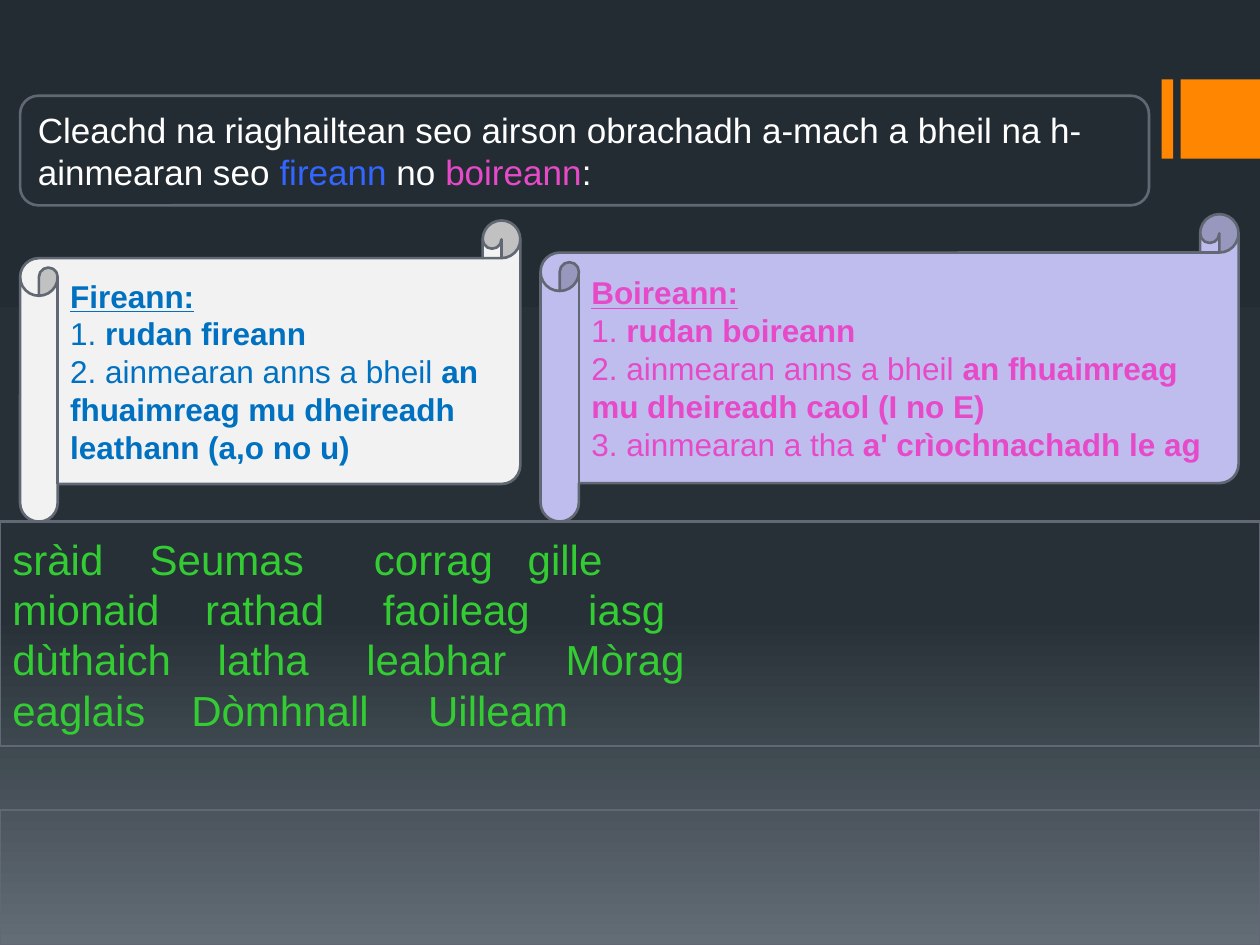
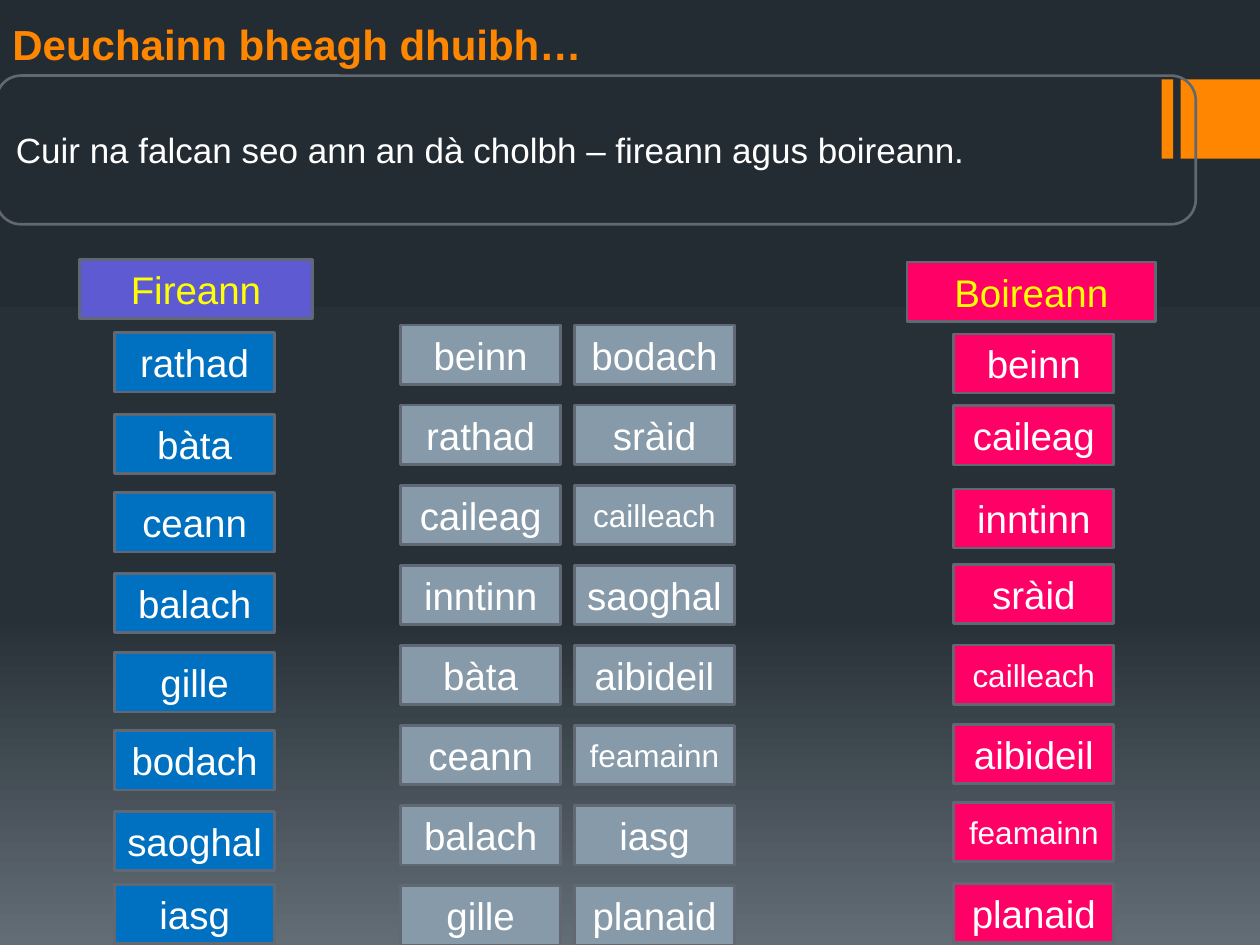
from copy import deepcopy
from dataclasses import dataclass
from typing import Optional

from lxml import etree
from pptx import Presentation
from pptx.dml.color import RGBColor
from pptx.enum import shapes, text
from pptx.oxml import ns
from pptx.util import Inches, Pt

ORANGE = RGBColor(0xFF, 0x86, 0x00)
OUTLINE = RGBColor(0x61, 0x68, 0x73)
WHITE = RGBColor(0xFF, 0xFF, 0xFF)
PAPER = RGBColor(0xF2, 0xF2, 0xF2)
LILAC = RGBColor(0xBE, 0xBD, 0xED)
BLUE = RGBColor(0x00, 0x70, 0xC0)
BRIGHT_BLUE = RGBColor(0x33, 0x66, 0xFF)
PINK = RGBColor(0xE7, 0x4A, 0xC9)
GREEN = RGBColor(0x33, 0xCC, 0x33)
GREY = RGBColor(0x86, 0x9A, 0xA9)
VIOLET = RGBColor(0x5D, 0x5A, 0xD2)
RASPBERRY = RGBColor(0xFF, 0x00, 0x66)
YELLOW = RGBColor(0xFF, 0xFF, 0x00)
BACKDROP = (
    (0, RGBColor(0x24, 0x2C, 0x33)),
    (0.65, RGBColor(0x27, 0x30, 0x37)),
    (1, RGBColor(0x63, 0x6D, 0x76)),
)
FONT = "Arial"
CARD_WIDTH, CARD_HEIGHT = 1.27, 0.47
LONG_WORDS = {"cailleach", "feamainn"}


@dataclass(frozen=True)
class Span:
    words: str
    color: Optional[RGBColor] = None
    bold: Optional[bool] = None
    underline: Optional[bool] = None


@dataclass(frozen=True)
class Line:
    spans: tuple[Span, ...]
    tabs: tuple[float, ...] = ()


@dataclass(frozen=True)
class Panel:
    kind: shapes.MSO_SHAPE
    box: tuple[float, float, float, float]
    fill: Optional[RGBColor] = None
    lines: tuple[Line, ...] = ()
    size: int = 20
    color: RGBColor = WHITE
    align: text.PP_ALIGN = text.PP_ALIGN.LEFT
    outlined: bool = True


@dataclass(frozen=True)
class WordColumn:
    left: float
    tops: tuple[float, ...]
    fill: RGBColor
    words: tuple[str, ...]


def plain(words: str) -> Line:
    return Line((Span(words),))


def rule(number: str, strong: str) -> Line:
    return Line((Span(number), Span(strong, bold=True)))


def heading(words: str) -> Line:
    return Line((Span(words, bold=True, underline=True),))


def word_row(words: str, *tabs: float) -> Line:
    return Line((Span("\t".join(words.split())),), tabs)


def write(frame, lines, size: int, color: RGBColor, align=text.PP_ALIGN.LEFT) -> None:
    frame.word_wrap = True
    for index, line in enumerate(lines):
        paragraph = frame.add_paragraph() if index else frame.paragraphs[0]
        paragraph.alignment = align
        if line.tabs:
            stops = etree.SubElement(paragraph._p.get_or_add_pPr(), ns.qn("a:tabLst"))
            for position in line.tabs:
                etree.SubElement(stops, ns.qn("a:tab"), pos=str(Inches(position)), algn="l")
        font = paragraph.font
        font.name, font.size = FONT, Pt(size)
        font.color.rgb = color
        for span in line.spans:
            run = paragraph.add_run()
            run.text = span.words
            run.font.bold, run.font.underline = span.bold, span.underline
            if span.color is not None:
                run.font.color.rgb = span.color


def draw_panel(slide, panel: Panel) -> None:
    shape = slide.shapes.add_shape(panel.kind, *map(Inches, panel.box))
    shape.shadow.inherit = False
    if panel.fill is None:
        shape.fill.background()
    else:
        shape.fill.solid()
        shape.fill.fore_color.rgb = panel.fill
    if panel.outlined:
        shape.line.color.rgb = OUTLINE
        shape.line.width = Pt(1.5)
    else:
        shape.line.fill.background()
    shape.text_frame.vertical_anchor = text.MSO_ANCHOR.MIDDLE
    write(shape.text_frame, panel.lines, panel.size, panel.color, panel.align)


def draw_card(slide, word: str, box, fill: RGBColor, color: RGBColor = WHITE) -> None:
    size = 18 if word in LONG_WORDS else 22
    draw_panel(slide, Panel(shapes.MSO_SHAPE.FLOWCHART_PROCESS, box, fill,
                            (plain(word),), size, color, text.PP_ALIGN.CENTER))


def draw_column(slide, column: WordColumn) -> None:
    for word, top in zip(column.words, column.tops):
        draw_card(slide, word, (column.left, top, CARD_WIDTH, CARD_HEIGHT), column.fill)


def set_backdrop(master) -> None:
    fill = master.background.fill
    fill.gradient()
    fill.gradient_angle = 270
    stops = master.element.find(".//" + ns.qn("a:gsLst"))
    stops.append(deepcopy(stops[-1]))
    for stop, (position, color) in zip(fill.gradient_stops, BACKDROP):
        stop.position = position
        stop.color.rgb = color


def add_slide(deck):
    slide = deck.slides.add_slide(deck.slide_layouts[6])
    for left, width in ((9.22, 0.09), (9.37, 0.63)):
        draw_panel(slide, Panel(shapes.MSO_SHAPE.RECTANGLE, (left, 0.63, width, 0.63),
                                ORANGE, outlined=False))
    return slide


def build_rules(deck) -> None:
    slide = add_slide(deck)
    instruction = Line((
        Span("Cleachd na riaghailtean seo airson obrachadh a-mach a bheil na h-ainmearan seo "),
        Span("fireann", BRIGHT_BLUE), Span(" no "), Span("boireann", PINK), Span(":"),
    ))
    masculine = (
        heading("Fireann:"),
        rule("1. ", "rudan fireann"),
        rule("2. ainmearan anns a bheil ", "an fhuaimreag mu dheireadh leathann (a,o no u)"),
    )
    feminine = (
        heading("Boireann:"),
        rule("1. ", "rudan boireann"),
        rule("2. ainmearan anns a bheil ", "an fhuaimreag mu dheireadh caol (I no E)"),
        rule("3. ainmearan a tha ", "a' crìochnachadh le ag"),
    )
    nouns = (
        word_row("sràid Seumas corrag gille", 1.09, 2.87, 4.09),
        word_row("mionaid rathad faoileag iasg", 1.53, 2.94, 4.57),
        word_row("dùthaich latha leabhar Mòrag", 1.63, 2.81, 4.39),
        word_row("eaglais Dòmhnall Uilleam", 1.42, 3.3),
    )
    kinds = shapes.MSO_SHAPE
    for panel in (
        Panel(kinds.ROUNDED_RECTANGLE, (0.16, 0.76, 8.96, 0.87), lines=(instruction,)),
        Panel(kinds.HORIZONTAL_SCROLL, (0.16, 1.75, 3.97, 2.39), PAPER, masculine, 18, BLUE),
        Panel(kinds.HORIZONTAL_SCROLL, (4.29, 1.7, 5.54, 2.44), LILAC, feminine, 18, PINK),
        Panel(kinds.RECTANGLE, (0, 4.14, 10, 1.78), None, nouns, 24, GREEN),
        Panel(kinds.RECTANGLE, (0, 6.43, 10, 1.07)),
    ):
        draw_panel(slide, panel)


def build_sorting(deck) -> None:
    slide = add_slide(deck)
    title = slide.shapes.add_textbox(0, 0, Inches(7.91), Inches(0.6)).text_frame
    title.vertical_anchor = text.MSO_ANCHOR.BOTTOM
    write(title, (Line((Span("Deuchainn bheagh dhuibh…", bold=True),)),), 24, ORANGE)
    draw_panel(slide, Panel(
        shapes.MSO_SHAPE.ROUNDED_RECTANGLE, (-0.03, 0.6, 9.52, 1.18),
        lines=(plain("Cuir na falcan seo ann an dà cholbh – fireann agus boireann."),)))
    draw_card(slide, "Fireann", (0.63, 2.06, 1.85, CARD_HEIGHT), VIOLET, YELLOW)
    draw_card(slide, "Boireann", (7.2, 2.08, 1.97, CARD_HEIGHT), RASPBERRY, YELLOW)

    bank_tops = tuple(2.58 + row * 4.45 / 7 for row in range(8))
    masculine_tops = (2.64, 3.29, 3.91, 4.55, 5.18, 5.8, 6.44, 7.02)
    feminine_tops = (2.65, 3.22, 3.88, 4.48, 5.12, 5.75, 6.37, 7.01)
    for column in (
        WordColumn(3.18, bank_tops, GREY, (
            "beinn", "rathad", "caileag", "inntinn", "bàta", "ceann", "balach", "gille")),
        WordColumn(4.56, bank_tops, GREY, (
            "bodach", "sràid", "cailleach", "saoghal", "aibideil", "feamainn", "iasg", "planaid")),
        WordColumn(0.91, masculine_tops, BLUE, (
            "rathad", "bàta", "ceann", "balach", "gille", "bodach", "saoghal", "iasg")),
        WordColumn(7.57, feminine_tops, RASPBERRY, (
            "beinn", "caileag", "inntinn", "sràid", "cailleach", "aibideil", "feamainn", "planaid")),
    ):
        draw_column(slide, column)


def main() -> None:
    deck = Presentation()
    deck.slide_width, deck.slide_height = Inches(10), Inches(7.5)
    set_backdrop(deck.slide_master)
    build_rules(deck)
    build_sorting(deck)
    deck.save("out.pptx")


if __name__ == "__main__":
    main()
